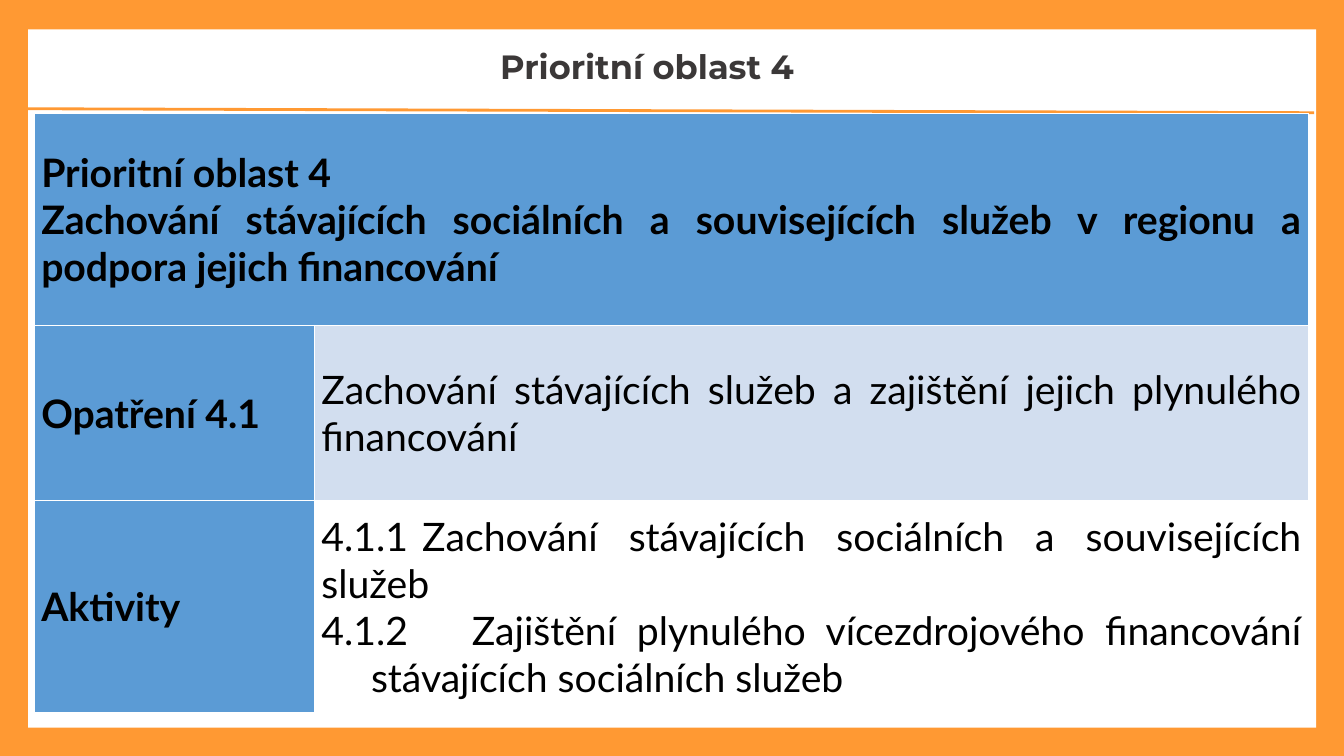
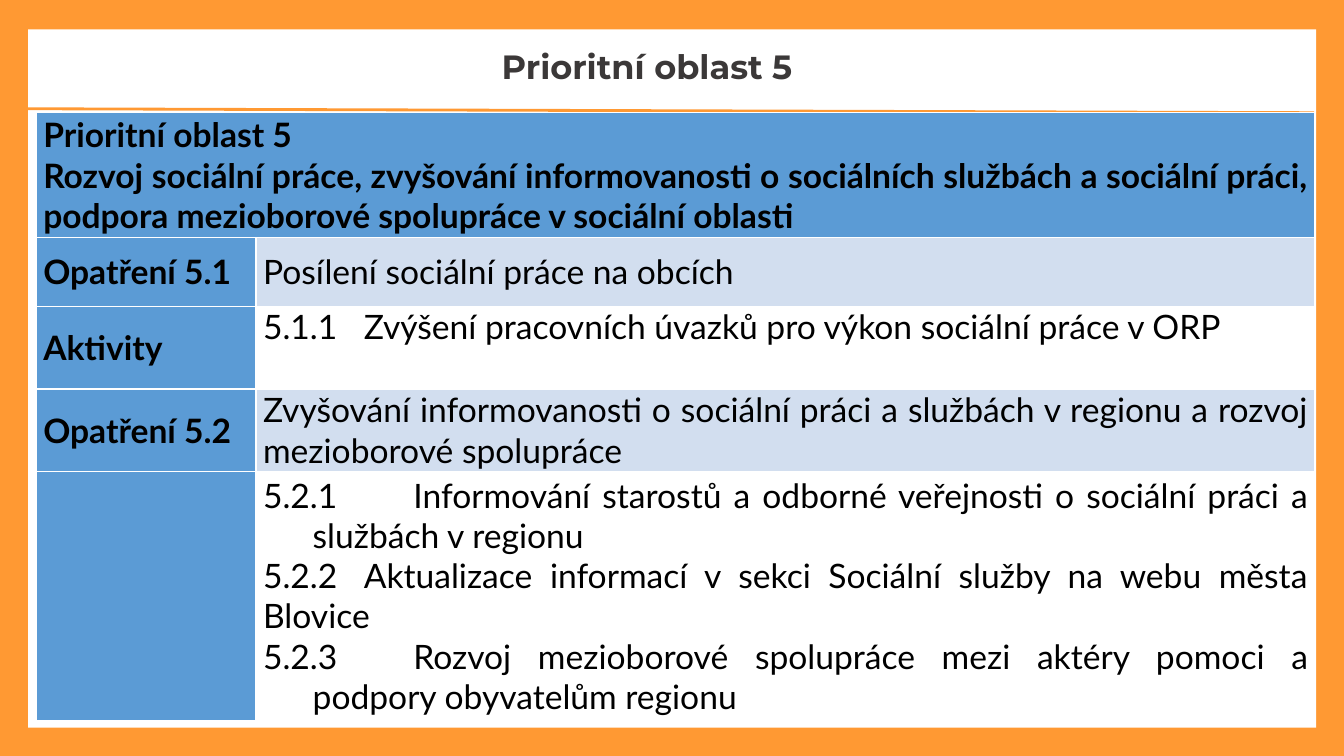
import pptx
import pptx.util
import pptx.dml.color
import pptx.enum.shapes
import pptx.enum.text
import pptx.oxml.ns
import lxml.etree
from dataclasses import dataclass

Cm = pptx.util.Cm
Pt = pptx.util.Pt
Tone = pptx.dml.color.RGBColor.from_string
Side = pptx.enum.text.PP_ALIGN
Hold = pptx.enum.text.MSO_ANCHOR


@dataclass(frozen=True)
class Theme:
    orange: str = "FF9933"
    white: str = "FFFFFF"
    blue: str = "5B9BD5"
    pale: str = "D2DEEF"
    grey: str = "3B3838"
    black: str = "000000"
    head: str = "Montserrat"
    body: str = "Lato"
    title: int = 24
    large: int = 28
    small: int = 24


@dataclass(frozen=True)
class Box:
    left: float
    top: float
    width: float
    height: float

    def place(self):
        return [Cm(n) for n in (self.left, self.top, self.width, self.height)]


THEME = Theme()
PAGE = Box(0, 0, 33.87, 19.05)
PANEL = Box(0.71, 0.74, 32.46, 17.6)
TITLE = Box(7.72, 0.99, 17.17, 1.3)
HANG = Cm(1.25)
PAD = Cm(0.18)


def apply(item, vals):
    for name, val in vals.items():
        setattr(item, name, val)


def paint(fill, tone):
    fill.solid()
    fill.fore_color.rgb = Tone(tone)


def style(font, face, size, bold, tone):
    apply(font, {"name": face, "size": Pt(size), "bold": bold})
    font.color.rgb = Tone(tone)


def frame(layout, slide, box):
    panel = slide.shapes.add_shape(
        pptx.enum.shapes.MSO_SHAPE.RECTANGLE, *box.place())
    panel.shadow.inherit = False
    paint(panel.fill, THEME.white)
    panel.line.fill.background()
    rule = slide.shapes.add_connector(
        pptx.enum.shapes.MSO_CONNECTOR.STRAIGHT,
        Cm(box.left), Cm(box.top + 2),
        Cm(box.left + box.width - 0.05), Cm(box.top + 2.1))
    rule.line.width = Pt(2)
    rule.line.color.rgb = Tone(THEME.orange)
    lxml.etree.SubElement(
        rule.element.spPr, pptx.oxml.ns.qn("a:effectLst"))
    for spot, part in enumerate((panel, rule), 2):
        layout.shapes.element.insert(spot, part.element)


def head(slide, box, text):
    title = slide.shapes.title
    names = ("left", "top", "width", "height")
    apply(title, dict(zip(names, box.place())))
    text_box = title.text_frame
    text_box.text = text
    apply(text_box, {"vertical_anchor": Hold.BOTTOM, "word_wrap": True,
                     "auto_size": pptx.enum.text.MSO_AUTO_SIZE.NONE})
    line = text_box.paragraphs[0]
    line.alignment = Side.CENTER
    style(line.font, THEME.head, THEME.title, True, THEME.grey)


def write(cell, lines, size, bold, tone, hold=Hold.MIDDLE):
    paint(cell.fill, tone)
    apply(cell, {"margin_left": PAD, "margin_right": PAD, "margin_top": 0,
                 "margin_bottom": 0, "vertical_anchor": hold})
    for spot, text in enumerate(lines):
        line = (cell.text_frame.add_paragraph() if spot
                else cell.text_frame.paragraphs[0])
        hangs = isinstance(text, tuple)
        line.text = "\t".join(text) if hangs else text
        line.alignment = Side.JUSTIFY
        form = line._p.get_or_add_pPr()
        form.set("defTabSz", str(pptx.util.Inches(1)))
        if hangs:
            form.set("marL", str(HANG))
            form.set("indent", str(-HANG))
        style(line.font, THEME.body, size, bold, THEME.black)


def plan(slide, box, first, highs, size, intro, rows):
    grid = slide.shapes.add_table(len(highs), 2, *box.place()).table
    grid.horz_banding = False
    grid.columns[0].width = Cm(first)
    grid.columns[1].width = Cm(box.width - first)
    for row, high in zip(grid.rows, highs):
        row.height = Cm(high)
    grid.cell(0, 0).merge(grid.cell(0, 1))
    write(grid.cell(0, 0), intro, size, True, THEME.blue)
    for spot, (label, lines, hold) in enumerate(rows, 1):
        tone = THEME.pale if spot % 2 else THEME.white
        write(grid.cell(spot, 0), [label] if label else [],
              size, True, THEME.blue)
        write(grid.cell(spot, 1), lines, size, False, tone, hold)


PLANS = [
    ("Prioritní oblast 4", Box(0.86, 2.87, 32.11, 15.08), 7.06,
     (5.33, 4.42, 5.33), THEME.large,
     "Zachování stávajících sociálních a souvisejících služeb v regionu a "
     "podpora jejich financování",
     [("Opatření 4.1",
       ["Zachování stávajících služeb a zajištění jejich plynulého "
        "financování"], Hold.MIDDLE),
      ("Aktivity",
       ["4.1.1\tZachování stávajících sociálních a souvisejících služeb",
        ("4.1.2", "Zajištění plynulého vícezdrojového financování "
         "stávajících sociálních služeb")], Hold.MIDDLE)]),
    ("Prioritní oblast 5", Box(0.91, 2.84, 32.23, 15.31), 5.54,
     (3.15, 1.73, 2.08, 2.08, 6.27), THEME.small,
     "Rozvoj sociální práce, zvyšování informovanosti o sociálních službách "
     "a sociální práci, podpora mezioborové spolupráce v sociální oblasti",
     [("Opatření 5.1", ["Posílení sociální práce na obcích"], Hold.MIDDLE),
      ("Aktivity",
       ["5.1.1\tZvýšení pracovních úvazků pro výkon sociální práce v ORP"],
       Hold.TOP),
      ("Opatření 5.2",
       ["Zvyšování informovanosti o sociální práci a službách v regionu a "
        "rozvoj mezioborové spolupráce"], Hold.MIDDLE),
      ("",
       [("5.2.1", "Informování starostů a odborné veřejnosti o sociální "
         "práci a službách v regionu"),
        "5.2.2\tAktualizace informací v sekci Sociální služby na webu města "
        "Blovice",
        ("5.2.3", "Rozvoj mezioborové spolupráce mezi aktéry pomoci a "
         "podpory obyvatelům regionu")], Hold.MIDDLE)]),
]


def main():
    deck = pptx.Presentation()
    apply(deck, {"slide_width": Cm(PAGE.width),
                 "slide_height": Cm(PAGE.height)})
    paint(deck.slide_master.background.fill, THEME.orange)
    layout = deck.slide_layouts[5]
    for spot, (name, box, first, highs, size, goal, rows) in enumerate(PLANS):
        slide = deck.slides.add_slide(layout)
        if not spot:
            frame(layout, slide, PANEL)
        head(slide, TITLE, name)
        plan(slide, box, first, highs, size, [name, goal], rows)
    deck.save("out.pptx")


if __name__ == "__main__":
    main()
